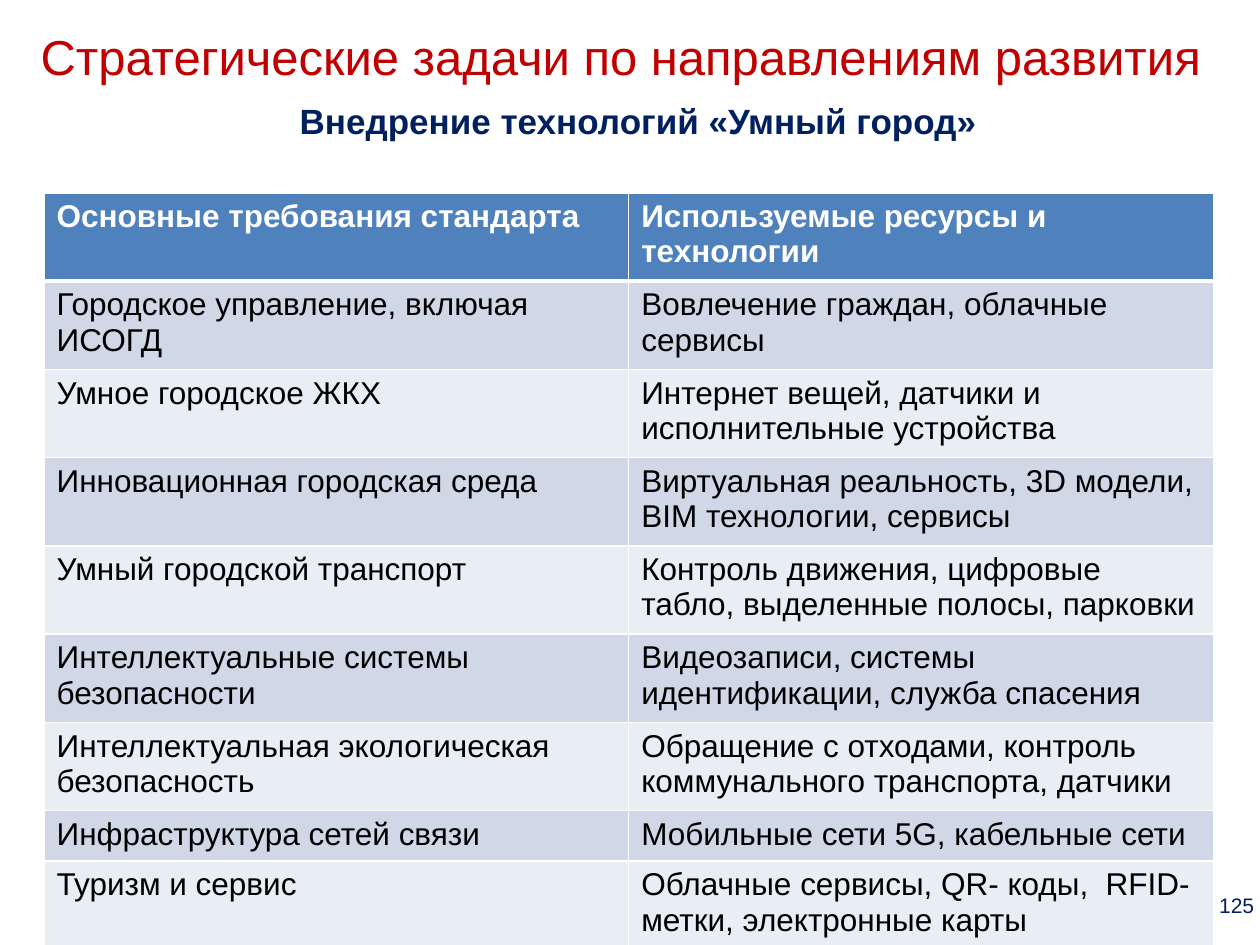
from dataclasses import dataclass

from lxml.etree import SubElement
from pptx import Presentation
from pptx.dml.color import RGBColor
from pptx.enum.text import MSO_ANCHOR, PP_ALIGN
from pptx.oxml.ns import qn
from pptx.util import Inches, Pt

FONT = "Arial"
COLORS = {
    "title": "C00000",
    "navy": "002060",
    "header": "4F81BD",
    "odd": "D0D8E8",
    "even": "E9EDF4",
    "white": "FFFFFF",
    "black": "000000",
}
SLIDE_WIDTH = 10
TABLE_LEFT, TABLE_TOP, TABLE_WIDTH = 0.35, 1.53, 9.28
TABLE_RIGHT = TABLE_LEFT + TABLE_WIDTH


@dataclass
class TextStyle:
    size: float
    color: str
    bold: bool = False


@dataclass
class Label:
    text: str
    left: float
    top: float
    width: float
    height: float
    style: TextStyle
    anchor: MSO_ANCHOR = MSO_ANCHOR.MIDDLE
    side_margin: float = 0.1


@dataclass
class Row:
    requirement: str
    resources: str
    height: float = 0.7


LABELS = [
    # The slide number sits in the margin to the right of the table
    Label("125", TABLE_RIGHT, 6.98, SLIDE_WIDTH - TABLE_RIGHT, 0.4,
          TextStyle(12, "navy"), side_margin=0),
    Label("Внедрение технологий «Умный город»", 0.5, 0.74, 9.13, 0.44,
          TextStyle(20, "navy", True), anchor=MSO_ANCHOR.TOP),
    Label("Стратегические задачи по направлениям развития", 0.11, 0.03, 9.63, 0.83,
          TextStyle(28, "title")),
]

ROWS = [
    Row("Основные требования стандарта", "Используемые ресурсы и технологии"),
    Row("Городское управление, включая ИСОГД", "Вовлечение граждан, облачные сервисы"),
    Row("Умное городское ЖКХ", "Интернет вещей, датчики и исполнительные устройства"),
    Row("Инновационная городская среда",
        "Виртуальная реальность, 3D модели, BIM технологии, сервисы"),
    Row("Умный городской транспорт",
        "Контроль движения, цифровые табло, выделенные полосы, парковки"),
    Row("Интеллектуальные системы безопасности",
        "Видеозаписи, системы идентификации, служба спасения"),
    Row("Интеллектуальная экологическая безопасность",
        "Обращение с отходами, контроль коммунального транспорта, датчики"),
    Row("Инфраструктура сетей связи", "Мобильные сети 5G, кабельные сети", 0.4),
    Row("Туризм и сервис", "Облачные сервисы, QR- коды,  RFID-метки, электронные карты", 0.67),
]


def color(name: str) -> RGBColor:
    return RGBColor.from_string(COLORS[name])


def add_run(paragraph, text: str, style: TextStyle) -> None:
    run = paragraph.add_run()
    run.text = text
    run.font.name = FONT
    run.font.size = Pt(style.size)
    run.font.bold = style.bold
    run.font.color.rgb = color(style.color)


def add_label(slide, label: Label) -> None:
    shape = slide.shapes.add_textbox(Inches(label.left), Inches(label.top),
                                     Inches(label.width), Inches(label.height))
    frame = shape.text_frame
    frame.word_wrap = True
    frame.vertical_anchor = label.anchor
    frame.margin_left = frame.margin_right = Inches(label.side_margin)
    paragraph = frame.paragraphs[0]
    paragraph.alignment = PP_ALIGN.CENTER
    add_run(paragraph, label.text, label.style)


def set_borders(cell, top: float, bottom: float) -> None:
    properties = cell._tc.get_or_add_tcPr()
    for side, width in (("L", 1), ("R", 1), ("T", top), ("B", bottom)):
        line = SubElement(properties, qn(f"a:ln{side}"), w=str(Pt(width)))
        fill = SubElement(line, qn("a:solidFill"))
        SubElement(fill, qn("a:srgbClr"), val=COLORS["white"])


def add_requirements_table(slide, rows: list[Row]) -> None:
    height = sum(row.height for row in rows)
    table = slide.shapes.add_table(len(rows), 2, Inches(TABLE_LEFT), Inches(TABLE_TOP),
                                   Inches(TABLE_WIDTH), Inches(height)).table
    for index, row in enumerate(rows):
        table.rows[index].height = Inches(row.height)
        is_header = index == 0
        style = TextStyle(18, "white" if is_header else "black", is_header)
        fill = "header" if is_header else "odd" if index % 2 else "even"
        for column, text in enumerate((row.requirement, row.resources)):
            cell = table.cell(index, column)
            # The line under the header is thicker than the rest
            set_borders(cell, 3 if index == 1 else 1, 3 if is_header else 1)
            cell.fill.solid()
            cell.fill.fore_color.rgb = color(fill)
            add_run(cell.text_frame.paragraphs[0], text, style)


def main() -> None:
    presentation = Presentation()
    presentation.slide_width = Inches(SLIDE_WIDTH)
    presentation.slide_height = Inches(7.5)
    slide = presentation.slides.add_slide(presentation.slide_layouts[6])

    # Slide number, subtitle and title
    for label in LABELS:
        add_label(slide, label)

    # Requirements and the technologies that serve them
    add_requirements_table(slide, ROWS)

    presentation.save("out.pptx")


if __name__ == "__main__":
    main()
